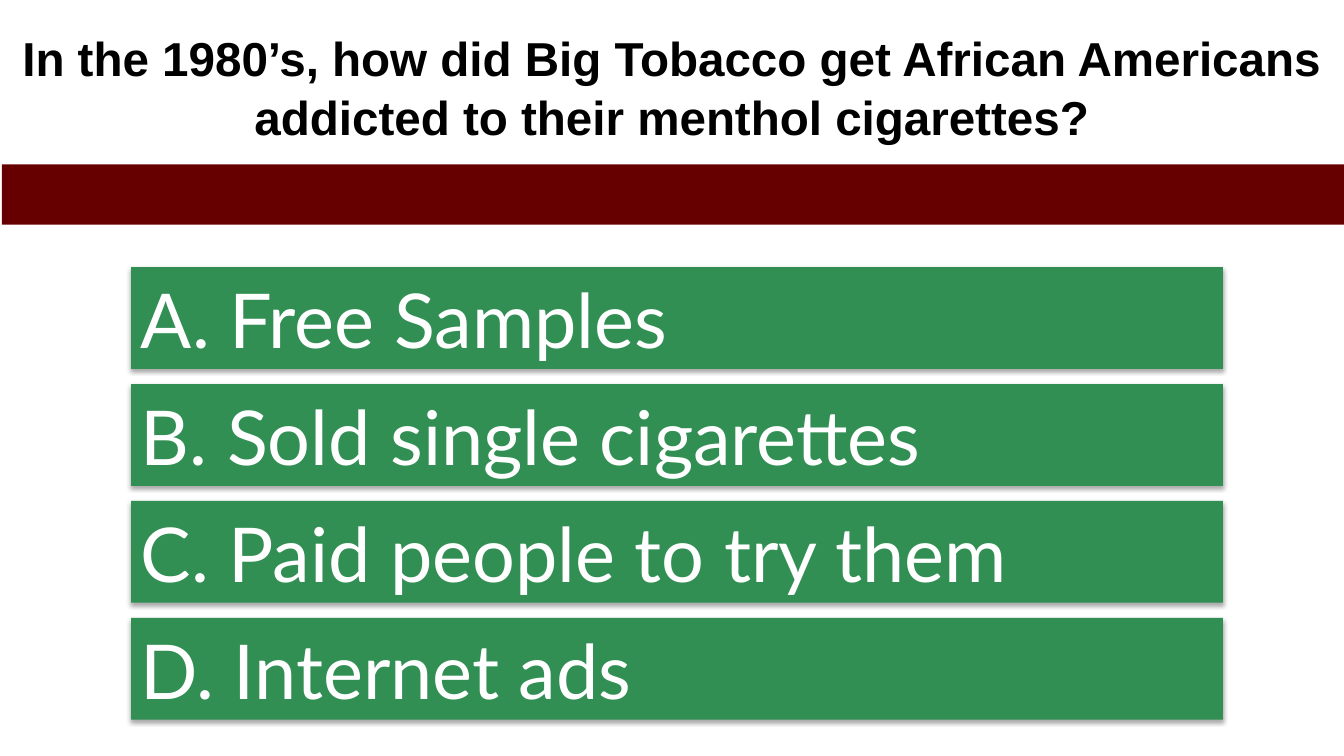
from dataclasses import dataclass

from lxml import etree
from pptx import Presentation
from pptx.dml.color import RGBColor
from pptx.enum.shapes import MSO_SHAPE
from pptx.enum.text import MSO_ANCHOR, MSO_AUTO_SIZE, PP_ALIGN
from pptx.oxml.ns import qn
from pptx.shapes.autoshape import Shape
from pptx.slide import Slide
from pptx.text.text import _Paragraph
from pptx.util import Inches, Pt

RECT = MSO_SHAPE.RECTANGLE
TOP, MIDDLE = MSO_ANCHOR.TOP, MSO_ANCHOR.MIDDLE
LEFT, CENTER = PP_ALIGN.LEFT, PP_ALIGN.CENTER
NO_FIT, GROW = MSO_AUTO_SIZE.NONE, MSO_AUTO_SIZE.SHAPE_TO_FIT_TEXT


@dataclass(frozen=True)
class Theme:
    ink: str = "000000"
    paper: str = "FFFFFF"
    green: str = "328F54"
    maroon: str = "660000"
    title_font: str = "Arial"
    title_size: int = 34
    answer_font: str = "Lato"
    answer_size: int = 54


@dataclass(frozen=True)
class Box:
    left: float
    top: float
    width: float
    height: float


THEME = Theme()
WIDTH, HEIGHT = 13.33, 7.5
TITLE_BOX = Box(0, 0.21, WIDTH, 1.38)
BAND_BOX = Box(0.02, 1.63, WIDTH, 0.6)
FIRST_BOX = Box(1.3, 2.65, 10.83, 1.01)
PITCH = 1.16
QUESTION = (
    "In the 1980’s, how did Big Tobacco get African Americans "
    "addicted to their menthol cigarettes?"
)
ANSWERS = (
    "A. Free Samples",
    "B. Sold single cigarettes",
    "C. Paid people to try them",
    "D. Internet ads",
)


def add_run(para: _Paragraph, text: str, font: str, size: int,
            color: str, bold: bool = False) -> None:
    run = para.add_run()
    run.text = text
    run.font.name = font
    run.font.size = Pt(size)
    run.font.bold = bold
    run.font.color.rgb = RGBColor.from_string(color)


def add_rect(slide: Slide, box: Box, color: str) -> Shape:
    rect = slide.shapes.add_shape(
        RECT, Inches(box.left), Inches(box.top),
        Inches(box.width), Inches(box.height))
    rect.shadow.inherit = False
    rect.fill.solid()
    rect.fill.fore_color.rgb = RGBColor.from_string(color)
    rect.line.fill.background()
    return rect


def add_shadow(shape: Shape) -> None:
    """Cast a soft shadow straight down, at 35% opacity."""
    effects = shape.element.spPr.find(qn("a:effectLst"))
    outer = etree.SubElement(
        effects, qn("a:outerShdw"), blurRad=str(Pt(3.1)),
        dist=str(Pt(1.8)), dir="5400000", rotWithShape="0")
    color = etree.SubElement(outer, qn("a:srgbClr"), val=THEME.ink)
    etree.SubElement(color, qn("a:alpha"), val="35000")


def add_title(slide: Slide) -> None:
    title = slide.shapes.title
    title.left, title.top = Inches(TITLE_BOX.left), Inches(TITLE_BOX.top)
    title.width, title.height = Inches(TITLE_BOX.width), Inches(TITLE_BOX.height)
    frame = title.text_frame
    frame.word_wrap = True
    frame.auto_size = NO_FIT
    frame.vertical_anchor = TOP
    para = frame.paragraphs[0]
    para.alignment = CENTER
    para.line_spacing = 1.04
    para.space_before = Pt(2)
    add_run(para, QUESTION, THEME.title_font, THEME.title_size, THEME.ink, True)


def add_answer(slide: Slide, row: int, text: str) -> None:
    box = Box(FIRST_BOX.left, FIRST_BOX.top + row * PITCH,
              FIRST_BOX.width, FIRST_BOX.height)
    rect = add_rect(slide, box, THEME.green)
    add_shadow(rect)
    frame = rect.text_frame
    frame.word_wrap = True
    frame.auto_size = GROW
    frame.vertical_anchor = MIDDLE
    para = frame.paragraphs[0]
    para.alignment = LEFT
    add_run(para, text, THEME.answer_font, THEME.answer_size, THEME.paper)


def main() -> None:
    deck = Presentation()
    deck.slide_width, deck.slide_height = Inches(WIDTH), Inches(HEIGHT)
    slide = deck.slides.add_slide(deck.slide_layouts.get_by_name("Title Only"))
    add_title(slide)
    for row, text in enumerate(ANSWERS):
        add_answer(slide, row, text)
    add_rect(slide, BAND_BOX, THEME.maroon)
    deck.save("out.pptx")


if __name__ == "__main__":
    main()
